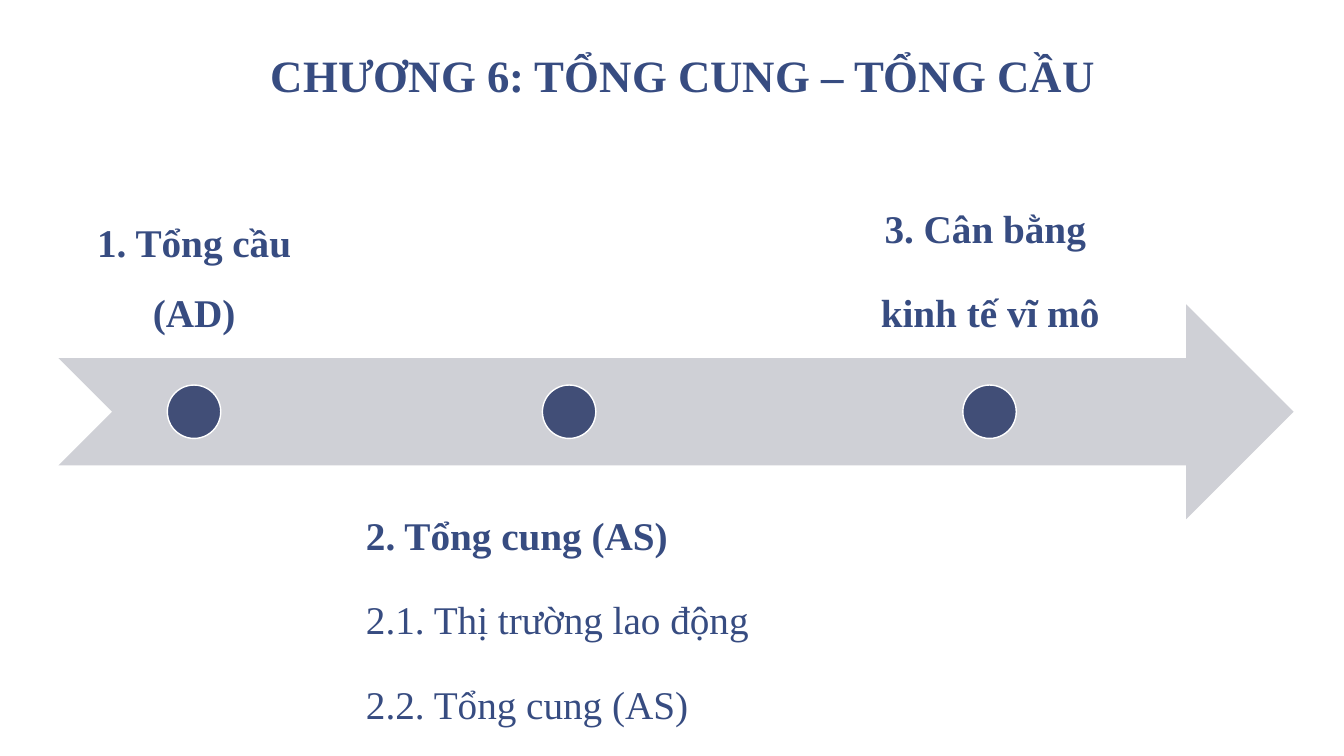
from dataclasses import dataclass

from pptx import Presentation
from pptx.dml.color import RGBColor
from pptx.enum.shapes import MSO_SHAPE
from pptx.enum.text import MSO_ANCHOR, MSO_AUTO_SIZE, PP_ALIGN
from pptx.shapes.autoshape import Shape
from pptx.slide import Slide
from pptx.util import Inches, Pt

HUES = {"text": "374C81", "arrow": "CFD0D6", "dot": "414E77", "edge": "FFFFFF"}
FONT = "Times New Roman"
DOT = 0.53


@dataclass
class Stage:
    """One stop on the timeline: its label box, dot and lines."""
    left: float
    top: float
    width: float
    dot: float
    anchor: MSO_ANCHOR
    align: PP_ALIGN
    lines: list[tuple[str, bool]]


STAGES = [
    Stage(0.58, 1.42, 2.69, 1.66, MSO_ANCHOR.BOTTOM, PP_ALIGN.CENTER,
          [("1. Tổng cầu (AD)", True)]),
    Stage(3.41, 4.62, 4.49, 5.38, MSO_ANCHOR.TOP, PP_ALIGN.JUSTIFY,
          [("2. Tổng cung (AS)", True), ("2.1. Thị trường lao động", False),
           ("2.2. Tổng cung (AS)", False)]),
    Stage(8.03, 1.42, 3.58, 9.55, MSO_ANCHOR.BOTTOM, PP_ALIGN.CENTER,
          [("3. Cân bằng ", True), ("kinh tế vĩ mô", True)]),
]


def style(para, size: float, bold: bool, align: PP_ALIGN, gap: float) -> None:
    """Format one paragraph in the slide's typeface."""
    para.alignment = align
    para.line_spacing = gap
    font = para.font
    font.name, font.size, font.bold = FONT, Pt(size), bold
    font.color.rgb = RGBColor.from_string(HUES["text"])


def add_title(slide: Slide, text: str) -> None:
    """Fill and place the title."""
    title = slide.shapes.title
    title.left, title.top = Inches(1.22), Inches(0.08)
    title.width, title.height = Inches(11.11), Inches(1)
    frame = title.text_frame
    frame.text = text
    frame.auto_size = MSO_AUTO_SIZE.NONE
    frame.vertical_anchor = MSO_ANCHOR.BOTTOM
    frame.margin_left = frame.margin_right = Inches(0.13)
    frame.margin_top = frame.margin_bottom = Inches(0.07)
    style(frame.paragraphs[0], 32, True, PP_ALIGN.CENTER, 0.85)


def add_form(slide: Slide, kind: MSO_SHAPE, left: float, top: float,
             width: float, height: float, hue: str) -> Shape:
    """Draw a flat preset shape without an outline."""
    form = slide.shapes.add_shape(
        kind, Inches(left), Inches(top), Inches(width), Inches(height))
    form.shadow.inherit = False
    form.fill.solid()
    form.fill.fore_color.rgb = RGBColor.from_string(HUES[hue])
    form.line.fill.background()
    return form


def add_stage(slide: Slide, stage: Stage) -> None:
    """Draw a stage's label and its dot on the arrow."""
    box = slide.shapes.add_textbox(
        Inches(stage.left), Inches(stage.top), Inches(stage.width), Inches(2.13))
    frame = box.text_frame
    frame.word_wrap = True
    frame.vertical_anchor = stage.anchor
    frame.margin_left = frame.margin_right = Inches(0.22)
    frame.margin_top = frame.margin_bottom = Inches(0.22)
    frame.text = "\n".join(text for text, _ in stage.lines)
    for para, (_, bold) in zip(frame.paragraphs, stage.lines):
        style(para, 28, bold, stage.align, 1.5)
        para.space_after = Pt(9.8)
    dot = add_form(slide, MSO_SHAPE.OVAL, stage.dot, 3.82, DOT, DOT, "dot")
    dot.line.color.rgb = RGBColor.from_string(HUES["edge"])
    dot.line.width = Pt(1)


def main() -> None:
    """Build and save the slide."""
    deck = Presentation()
    deck.slide_width, deck.slide_height = Inches(13.33), Inches(7.5)
    slide = deck.slides.add_slide(deck.slide_layouts[5])
    add_title(slide, "CHƯƠNG 6: TỔNG CUNG – TỔNG CẦU")
    add_form(slide, MSO_SHAPE.NOTCHED_RIGHT_ARROW, 0.58, 3.02, 12.25, 2.13, "arrow")
    for stage in STAGES:
        add_stage(slide, stage)
    deck.save("out.pptx")


if __name__ == "__main__":
    main()
